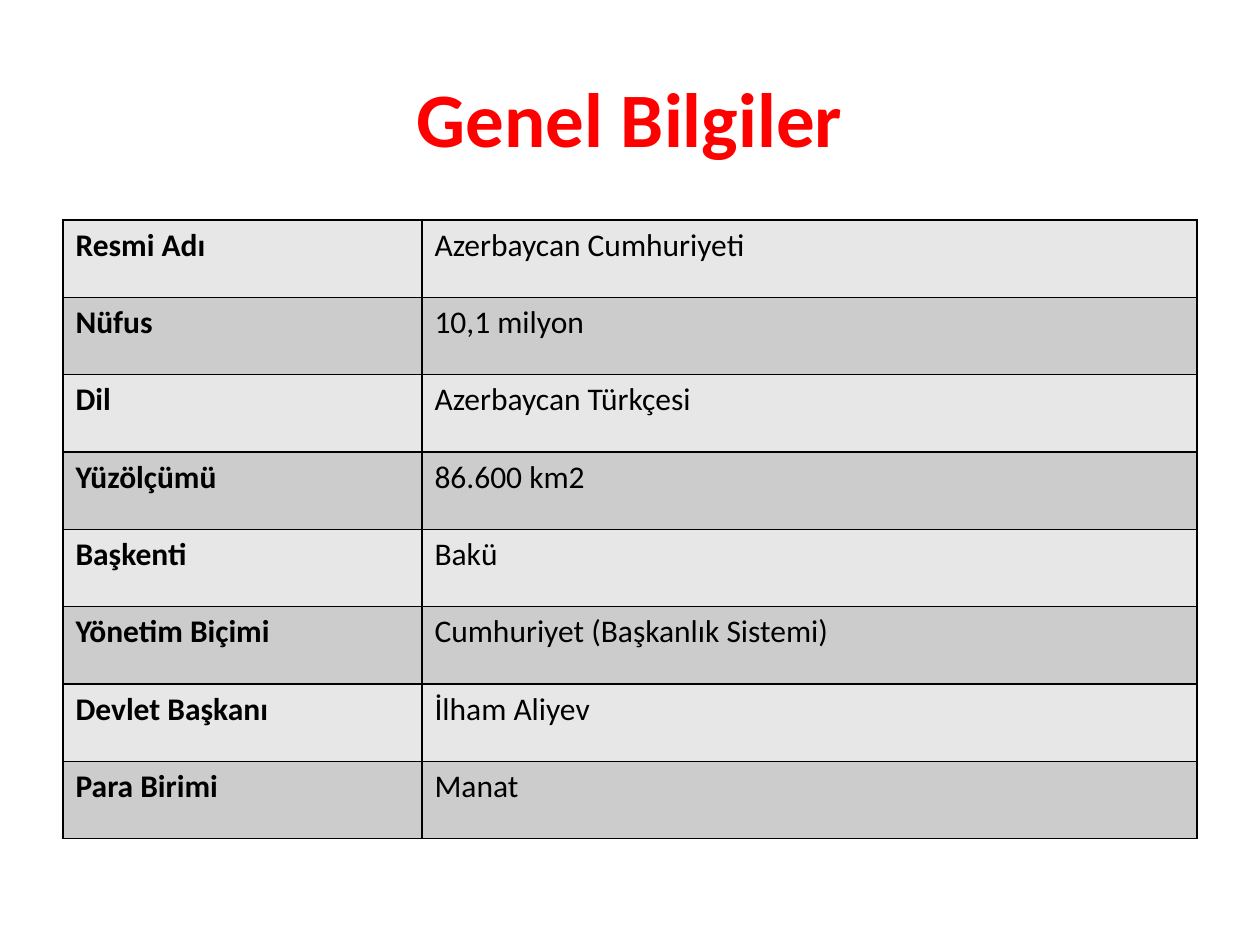
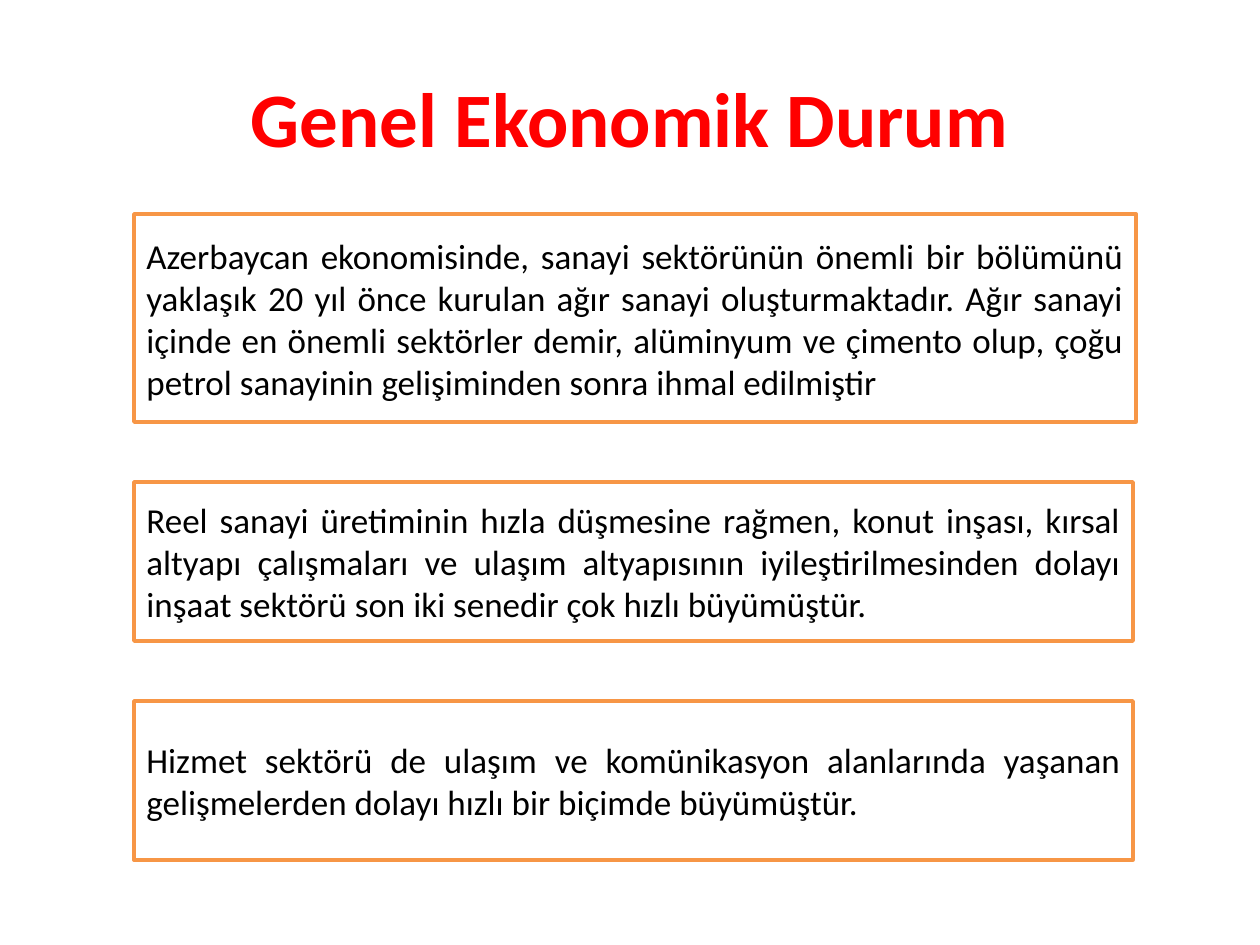
from lxml.etree import SubElement
from pptx import Presentation
from pptx.dml.color import RGBColor
from pptx.enum.shapes import MSO_SHAPE
from pptx.enum.text import MSO_ANCHOR, PP_ALIGN
from pptx.oxml.ns import qn
from pptx.util import Emu, Pt

RED = RGBColor(0xFF, 0x00, 0x00)
BLACK = RGBColor(0x00, 0x00, 0x00)
WHITE = RGBColor(0xFF, 0xFF, 0xFF)
ORANGE = RGBColor(0xF7, 0x96, 0x46)
BANDS = [RGBColor(0xE7, 0xE7, 0xE7), RGBColor(0xCC, 0xCC, 0xCC)]

FACTS_TITLE = "Genel Bilgiler"
FACTS = [
    ("Resmi Adı", "Azerbaycan Cumhuriyeti"),
    ("Nüfus", "10,1 milyon"),
    ("Dil", "Azerbaycan Türkçesi"),
    ("Yüzölçümü", "86.600 km2"),
    ("Başkenti", "Bakü"),
    ("Yönetim Biçimi", "Cumhuriyet (Başkanlık Sistemi)"),
    ("Devlet Başkanı", "İlham Aliyev"),
    ("Para Birimi", "Manat"),
]
COLS = [359, 775]

ECON_TITLE = "Genel Ekonomik Durum"
NOTES = [
    (1002, 208, "Azerbaycan ekonomisinde, sanayi sektörünün önemli bir bölümünü "
     "yaklaşık 20 yıl önce kurulan ağır sanayi oluşturmaktadır. Ağır sanayi "
     "içinde en önemli sektörler demir, alüminyum ve çimento olup, çoğu "
     "petrol sanayinin gelişiminden sonra ihmal edilmiştir"),
    (999, 159, "Reel sanayi üretiminin hızla düşmesine rağmen, konut inşası, kırsal "
     "altyapı çalışmaları ve ulaşım altyapısının iyileştirilmesinden dolayı "
     "inşaat sektörü son iki senedir çok hızlı büyümüştür."),
    (999, 159, "Hizmet sektörü de ulaşım ve komünikasyon alanlarında yaşanan "
     "gelişmelerden dolayı hızlı bir biçimde büyümüştür."),
]
NOTE_GAP = 60

TITLE_FONT = {"name": "Calibri", "size": Pt(44), "bold": True}
CELL_FONT = {"name": "Calibri", "size": Pt(18)}
NOTE_FONT = {"name": "Calibri", "size": Pt(20), "bold": False}


def px(n):
    return Emu(round(n * 914400 / 126))


def put(frame, text, look, color, align):
    frame.text = text
    para = frame.paragraphs[0]
    para.alignment = align
    font = para.runs[0].font
    for key, value in look.items():
        setattr(font, key, value)
    font.color.rgb = color


def add_page(deck, text):
    page = deck.slides.add_slide(deck.slide_layouts[5])
    title = page.shapes.title
    place = {"left": px(63), "top": px(38), "width": px(1134), "height": px(158)}
    for key, value in place.items():
        setattr(title, key, value)
    title.text_frame.vertical_anchor = MSO_ANCHOR.MIDDLE
    put(title.text_frame, text, TITLE_FONT, RED, PP_ALIGN.CENTER)
    return page


def add_edges(cell):
    props = cell._tc.get_or_add_tcPr()
    for spot, side in enumerate(("lnL", "lnR", "lnT", "lnB")):
        line = SubElement(props, qn("a:" + side), w=str(Pt(1)))
        fill = SubElement(line, qn("a:solidFill"))
        SubElement(fill, qn("a:srgbClr"), val=str(BLACK))
        props.insert(spot, line)


def add_facts(page):
    high = px(619)
    table = page.shapes.add_table(
        len(FACTS), len(COLS), px(63), px(220), px(sum(COLS)), high).table
    for col, wide in zip(table.columns, COLS):
        col.width = px(wide)
    for i, (row, fact) in enumerate(zip(table.rows, FACTS)):
        row.height = high // len(FACTS)
        for j, (cell, text) in enumerate(zip(row.cells, fact)):
            cell.fill.solid()
            cell.fill.fore_color.rgb = BANDS[i % 2]
            add_edges(cell)
            look = {**CELL_FONT, "bold": j == 0}
            put(cell.text_frame, text, look, BLACK, PP_ALIGN.LEFT)


def add_notes(page):
    top = 214
    for wide, high, text in NOTES:
        box = page.shapes.add_shape(
            MSO_SHAPE.RECTANGLE, px(134), px(top), px(wide), px(high))
        box.shadow.inherit = False
        box.fill.solid()
        box.fill.fore_color.rgb = WHITE
        box.line.color.rgb = ORANGE
        box.line.width = Pt(2)
        box.text_frame.word_wrap = True
        box.text_frame.vertical_anchor = MSO_ANCHOR.MIDDLE
        put(box.text_frame, text, NOTE_FONT, BLACK, PP_ALIGN.JUSTIFY)
        top += high + NOTE_GAP


def main():
    deck = Presentation()
    deck.slide_width, deck.slide_height = px(1260), px(945)
    add_facts(add_page(deck, FACTS_TITLE))
    add_notes(add_page(deck, ECON_TITLE))
    deck.save("out.pptx")


if __name__ == "__main__":
    main()
